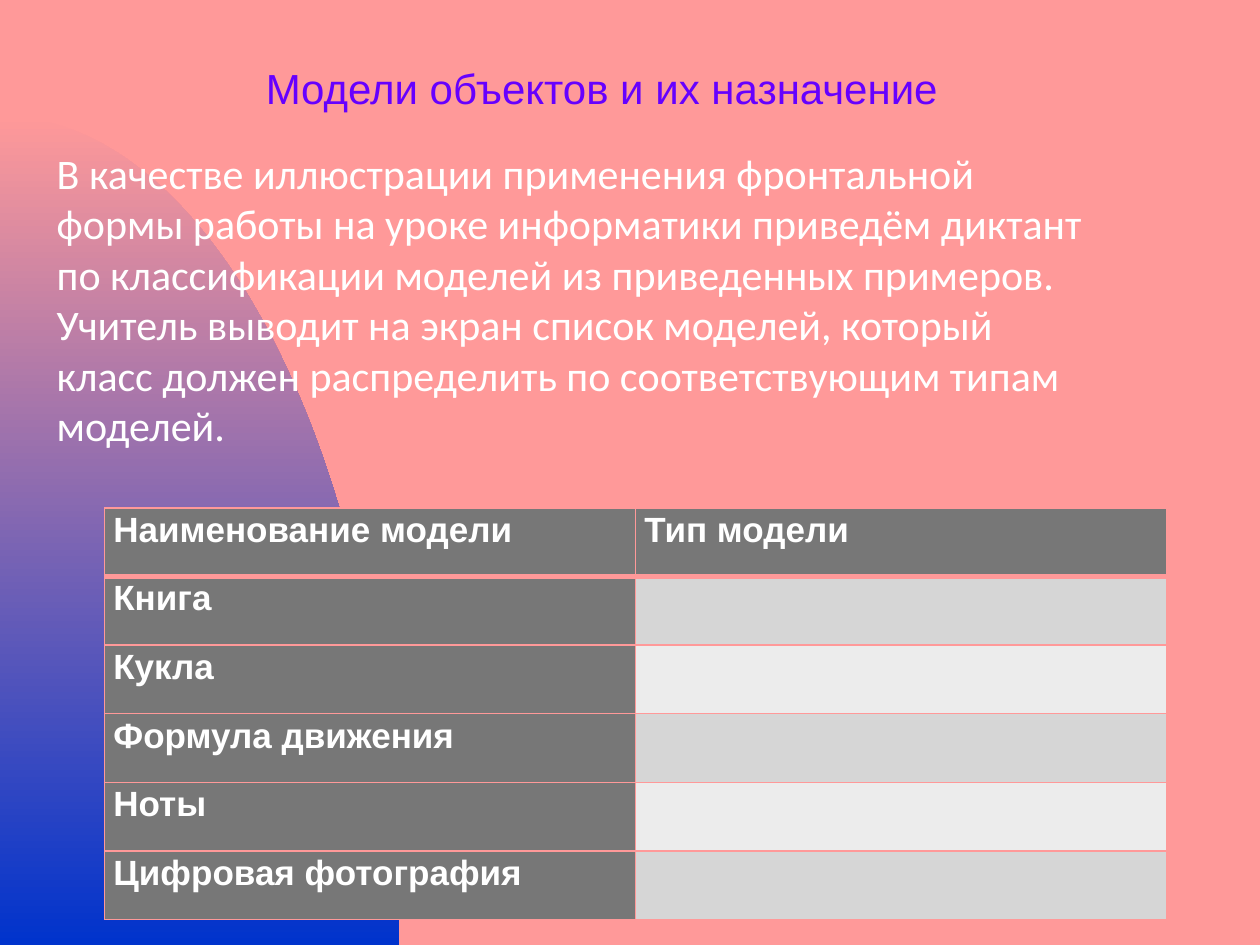
from dataclasses import dataclass
from math import cos, pi, sin

from lxml import etree
from pptx import Presentation
from pptx.dml.color import RGBColor
from pptx.enum.text import MSO_ANCHOR, MSO_AUTO_SIZE, PP_ALIGN
from pptx.oxml.ns import qn
from pptx.util import Inches, Pt

LEFT, TOP, MIDDLE = PP_ALIGN.LEFT, MSO_ANCHOR.TOP, MSO_ANCHOR.MIDDLE
NO_FIT = MSO_AUTO_SIZE.NONE
SLIDE_WIDTH, SLIDE_HEIGHT = Inches(10), Inches(7.5)
GRID_COLUMNS, GRID_ROWS = 100, 75
CURVE_STEPS = 90


@dataclass(frozen=True)
class Theme:
    background: str = "FF9999"
    deep_blue: str = "0033CC"
    title: str = "6600FF"
    light: str = "FFFFFF"
    header: str = "777777"
    bands: tuple[str, str] = ("D6D6D6", "ECECEC")
    title_font: str = "Arial"
    body_font: str = "Calibri"
    text_size: int = 24
    table_size: int = 20
    rule: int = 1
    header_rule: int = 3


@dataclass(frozen=True)
class Area:
    """Place and size in grid columns and rows."""
    column: float
    row: float
    columns: float
    rows: float

    def box(self) -> dict[str, int]:
        unit_x, unit_y = SLIDE_WIDTH / GRID_COLUMNS, SLIDE_HEIGHT / GRID_ROWS
        return {"left": round(self.column * unit_x), "top": round(self.row * unit_y),
                "width": round(self.columns * unit_x), "height": round(self.rows * unit_y)}


THEME = Theme()
CURVE_AREA = Area(0, 9.2, 31.7, 65.8)
TITLE_AREA = Area(20.1, 4.4, 63, 5.1)
BODY_AREA = Area(3.5, 11.2, 83.9, 29.3)
TABLE_AREA = Area(8.3, 40.3, 84.3, 32.7)

TITLE = "Модели объектов и их назначение"
BODY = (
    "В качестве иллюстрации применения фронтальной формы работы на уроке информатики "
    "приведём диктант по классификации моделей из приведенных примеров.",
    "Учитель выводит на экран список моделей, который класс должен распределить "
    "по соответствующим типам моделей.",
)
HEADINGS = ("Наименование модели", "Тип модели")
MODELS = ("Книга", "Кукла", "Формула движения", "Ноты", "Цифровая фотография")


def apply(target, values: dict) -> None:
    for name, value in values.items():
        setattr(target, name, value)


def write_paragraph(para, text: str, font: str, size: int, color: str,
                    bold: bool = False, spacing: float = 1.0) -> None:
    apply(para, {"alignment": LEFT, "line_spacing": spacing, "space_before": Pt(0)})
    span = para.add_run()
    span.text = text
    apply(span.font, {"name": font, "size": Pt(size), "bold": bold})
    span.font.color.rgb = RGBColor.from_string(color)


def fill_placeholder(holder, area: Area, texts: tuple[str, ...], font: str,
                     color: str, anchor) -> None:
    apply(holder, area.box())
    frame = holder.text_frame
    apply(frame, {"word_wrap": True, "auto_size": NO_FIT, "vertical_anchor": anchor})
    for index, text in enumerate(texts):
        para = frame.add_paragraph() if index else frame.paragraphs[0]
        write_paragraph(para, text, font, THEME.text_size, color)
        properties = para._p.get_or_add_pPr()
        apply_indent = {"marL": "0", "indent": "0"}
        for name, value in apply_indent.items():
            properties.set(name, value)
        etree.SubElement(properties, qn("a:buNone"))


def draw_curve(page, area: Area) -> None:
    """Draw the quarter ellipse in the lower left corner, behind everything."""
    box = area.box()
    angles = [pi / 2 * step / CURVE_STEPS for step in range(CURVE_STEPS + 1)]
    arc = [(round(box["width"] * sin(angle)),
            round(box["top"] + box["height"] * (1 - cos(angle)))) for angle in angles]
    builder = page.shapes.build_freeform(*arc[0])
    builder.add_line_segments(arc[1:] + [(0, SLIDE_HEIGHT)], close=True)
    curve = builder.convert_to_shape()
    curve.shadow.inherit = False
    curve.line.fill.background()
    curve.fill.gradient()
    curve.fill.gradient_angle = 270
    for stop, position, color in zip(curve.fill.gradient_stops, (0, 1),
                                     (THEME.background, THEME.deep_blue)):
        stop.position = position
        stop.color.rgb = RGBColor.from_string(color)
    page.shapes._spTree.insert(2, curve._element)


def set_borders(cell, top: int, bottom: int) -> None:
    properties = cell._tc.get_or_add_tcPr()
    widths = {"lnL": THEME.rule, "lnR": THEME.rule, "lnT": top, "lnB": bottom}
    for index, (tag, width) in enumerate(widths.items()):
        line = etree.Element(qn(f"a:{tag}"), w=str(Pt(width)))
        solid = etree.SubElement(line, qn("a:solidFill"))
        etree.SubElement(solid, qn("a:srgbClr"), val=THEME.background)
        properties.insert(index, line)


def draw_table(page, area: Area) -> None:
    rows = [HEADINGS] + [(model, "") for model in MODELS]
    box = area.box()
    table = page.shapes.add_table(len(rows), len(HEADINGS), **box).table
    for row in table.rows:
        row.height = box["height"] // len(rows)
    for row_index, texts in enumerate(rows):
        for column_index, text in enumerate(texts):
            cell = table.cell(row_index, column_index)
            apply(cell, {"margin_left": Inches(0.07), "margin_right": Inches(0.07),
                         "margin_top": 0, "margin_bottom": 0})
            color = THEME.header if text else THEME.bands[(row_index - 1) % 2]
            cell.fill.solid()
            cell.fill.fore_color.rgb = RGBColor.from_string(color)
            set_borders(cell, top=THEME.header_rule if row_index == 1 else THEME.rule,
                        bottom=THEME.header_rule if row_index == 0 else THEME.rule)
            if text:
                write_paragraph(cell.text_frame.paragraphs[0], text, THEME.title_font,
                                THEME.table_size, THEME.light, bold=True, spacing=1.07)


def main() -> None:
    deck = Presentation()
    apply(deck, {"slide_width": SLIDE_WIDTH, "slide_height": SLIDE_HEIGHT})
    page = deck.slides.add_slide(deck.slide_layouts[1])
    page.background.fill.solid()
    page.background.fill.fore_color.rgb = RGBColor.from_string(THEME.background)
    draw_curve(page, CURVE_AREA)
    draw_table(page, TABLE_AREA)
    fill_placeholder(page.shapes.title, TITLE_AREA, (TITLE,), THEME.title_font,
                     THEME.title, MIDDLE)
    fill_placeholder(page.placeholders[1], BODY_AREA, BODY, THEME.body_font,
                     THEME.light, TOP)
    deck.save("out.pptx")


if __name__ == "__main__":
    main()
